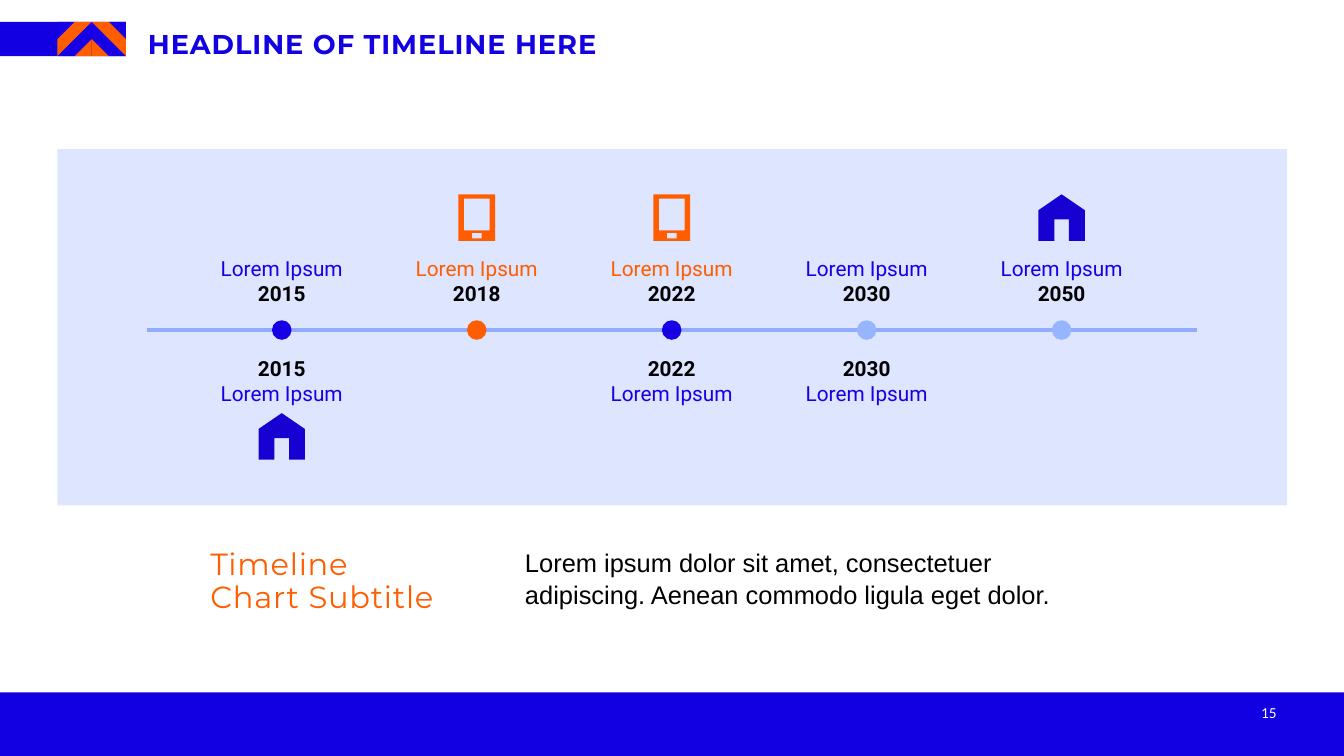
"""Build a timeline slide with five milestones, icons and a subtitle."""
from lxml import etree
from pptx import Presentation
from pptx import util as u
from pptx.dml.color import RGBColor
from pptx.enum import shapes, text
from pptx.oxml.ns import qn

BLUE = RGBColor(0x13, 0x00, 0xE2)
ROYAL = RGBColor(0x17, 0x00, 0xE6)
NAVY = RGBColor(0x17, 0x00, 0xD2)
ORANGE = RGBColor(0xFF, 0x5D, 0x00)
SKY = RGBColor(0x97, 0xB4, 0xFF)
PERIWINKLE = RGBColor(0x90, 0xAC, 0xFF)
BLACK = RGBColor(0, 0, 0)
WHITE = RGBColor(0xFF, 0xFF, 0xFF)

HEADLINE = "HEADLINE OF TIMELINE HERE"
SUBTITLE = ["Timeline", "Chart Subtitle"]
BODY = "Lorem ipsum dolor sit amet, consectetuer adipiscing. Aenean commodo ligula eget dolor."
PAGE = "15"
CAPTION = "Lorem Ipsum"
MILESTONES = [
    {"year": "2015", "caption": ROYAL, "dot": ROYAL, "below": True, "icon": "house", "icon_top": 6.76},
    {"year": "2018", "caption": ORANGE, "dot": ORANGE, "below": False, "icon": "tablet", "icon_top": 3.18},
    {"year": "2022", "caption": ORANGE, "dot": ROYAL, "below": True, "icon": "tablet", "icon_top": 3.18},
    {"year": "2030", "caption": ROYAL, "dot": SKY, "below": True, "icon": None},
    {"year": "2050", "caption": ROYAL, "dot": SKY, "below": False, "icon": "house", "icon_top": 3.18},
]

HOUSE = [[(-0.38, 0.26), (0, 0), (0.38, 0.26), (0.38, 0.76), (0.12, 0.76),
          (0.12, 0.41), (-0.12, 0.41), (-0.12, 0.76), (-0.38, 0.76)]]
TABLET = [
    [(-0.3, 0), (0.3, 0), (0.3, 0.76), (-0.3, 0.76)],
    [(-0.21, 0.07), (-0.21, 0.59), (0.21, 0.59), (0.21, 0.07)],
    [(-0.08, 0.63), (-0.08, 0.72), (0.08, 0.72), (0.08, 0.63)],
]
ICONS = {"house": (HOUSE, NAVY), "tablet": (TABLET, ORANGE)}
CHEVRON_HALF = [
    ([(1, 0), (2, 0), (2, 1)], ROYAL),
    ([(0, 0), (1, 0), (2, 1), (2, 2)], ORANGE),
    ([(0, 0), (2, 2), (1, 2), (0, 1)], ROYAL),
    ([(0, 1), (1, 2), (0, 2)], ORANGE),
]
CHEVRON_X, CHEVRON_Y, CHEVRON_STEP = 1.5, 0.36, 0.28
FIRST_X, STEP_X, AXIS_Y, DOT = 4.61, 3.19, 5.4, 0.32
LABEL_WIDTH, LABEL_HEIGHT, LABEL_ABOVE, LABEL_BELOW = 2.03, 0.85, 4.15, 5.79

deck = Presentation()
deck.slide_width, deck.slide_height = u.Inches(21.99), u.Inches(12.37)
slide = deck.slides.add_slide(deck.slide_layouts[6])


def paint(shape, color):
    shape.shadow.inherit = False
    shape.fill.solid()
    shape.fill.fore_color.rgb = color
    shape.line.fill.background()
    return shape


def preset(kind, color, *box):
    return paint(slide.shapes.add_shape(kind, *map(u.Inches, box)), color)


def outline(contours, color, x, y):
    placed = [[(u.Inches(x + dx), u.Inches(y + dy)) for dx, dy in contour] for contour in contours]
    builder = slide.shapes.build_freeform(*placed[0][0], scale=1.0)
    for number, contour in enumerate(placed):
        if number:
            builder.move_to(*contour[0])
        builder.add_line_segments(contour[1:], close=True)
    paint(builder.convert_to_shape(), color)


def write(lines, box, font, size, inset=0.0, align=text.PP_ALIGN.LEFT, spacing=None, tracking=0):
    frame = slide.shapes.add_textbox(*map(u.Inches, box)).text_frame
    frame.word_wrap = True
    frame.margin_left = frame.margin_right = frame.margin_bottom = 0
    frame.margin_top = u.Inches(inset)
    for number, (words, color, bold) in enumerate(lines):
        paragraph = frame.add_paragraph() if number else frame.paragraphs[0]
        paragraph.alignment = align
        paragraph.line_spacing = spacing
        paragraph.font.name, paragraph.font.size = font, u.Pt(size)
        paragraph.font.bold = bold
        paragraph.font.color.rgb = color
        run = paragraph.add_run()
        run.text = words
        if tracking:
            run._r.get_or_add_rPr().set("spc", str(tracking))


def label(lines, center, top):
    write(lines, (center - LABEL_WIDTH / 2, top, LABEL_WIDTH, LABEL_HEIGHT), "Roboto", 24.5,
          inset=0.04, align=text.PP_ALIGN.CENTER, spacing=u.Pt(28.9))


RECTANGLE = shapes.MSO_SHAPE.RECTANGLE
preset(RECTANGLE, BLUE, 0, 0.36, 2.06, 0.56)
for side in (-1, 1):
    for corners, color in CHEVRON_HALF:
        band = [(side * dx * CHEVRON_STEP, dy * CHEVRON_STEP) for dx, dy in corners]
        outline([band], color, CHEVRON_X, CHEVRON_Y)
preset(RECTANGLE, BLUE, 0, 11.33, 21.99, 1.04)
panel = preset(RECTANGLE, PERIWINKLE, 0.94, 2.44, 20.12, 5.83)
panel_color = panel._element.spPr.find(qn("a:solidFill"))[0]
etree.SubElement(panel_color, qn("a:alpha"), val="30000")

axis = slide.shapes.add_connector(shapes.MSO_CONNECTOR.STRAIGHT, u.Inches(2.4), u.Inches(AXIS_Y),
                                  u.Inches(19.58), u.Inches(AXIS_Y))
axis.line.color.rgb = PERIWINKLE
axis.line.width = u.Pt(4.12)
etree.SubElement(axis._element.spPr, qn("a:effectLst"))

for index, milestone in enumerate(MILESTONES):
    center = FIRST_X + index * STEP_X
    year = (milestone["year"], BLACK, True)
    preset(shapes.MSO_SHAPE.OVAL, milestone["dot"], center - DOT / 2, AXIS_Y - DOT / 2, DOT, DOT)
    label([(CAPTION, milestone["caption"], False), year], center, LABEL_ABOVE)
    if milestone["below"]:
        label([year, (CAPTION, ROYAL, False)], center, LABEL_BELOW)
    if milestone["icon"]:
        contours, color = ICONS[milestone["icon"]]
        outline(contours, color, center, milestone["icon_top"])

write([(HEADLINE, BLUE, True)], (2.42, 0.4, 18.32, 0.55), "Montserrat", 32, inset=0.04, tracking=110)
write([(line, ORANGE, False) for line in SUBTITLE], (3.44, 8.95, 4.62, 1.08), "Montserrat", 36,
      inset=0.04, spacing=u.Pt(38.2), tracking=90)
write([(BODY, BLACK, False)], (8.59, 8.94, 9.5, 1.01), "Arial", 30, spacing=1.03)
write([(PAGE, WHITE, False)], (15.83, 11.5, 5.06, 0.3), "Calibri", 18, align=text.PP_ALIGN.RIGHT)

deck.save("out.pptx")
